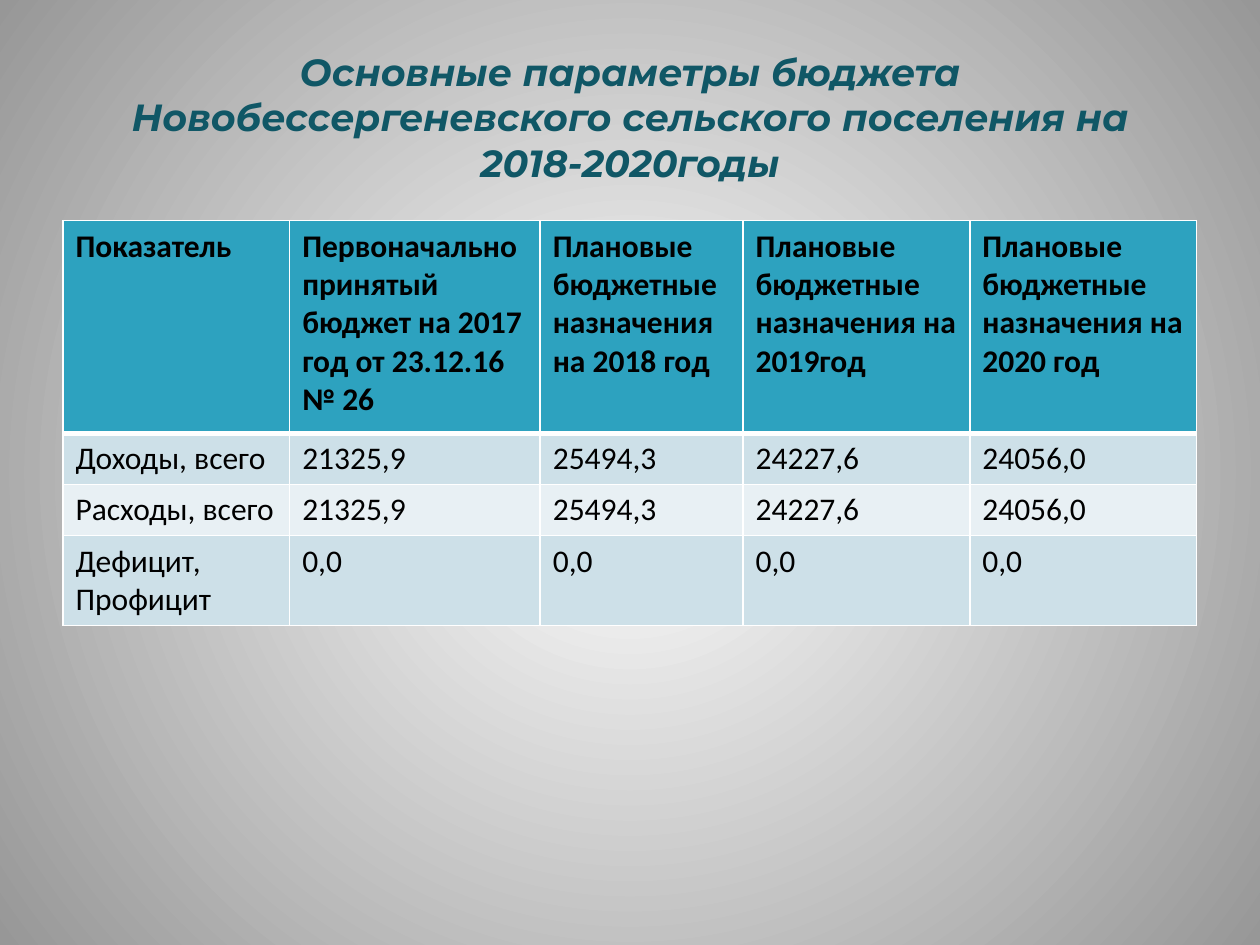
from pptx import Presentation
from pptx.dml.color import RGBColor
from pptx.enum.text import MSO_ANCHOR, PP_ALIGN
from pptx.oxml import parse_xml
from pptx.oxml.ns import nsdecls
from pptx.util import Cm, Pt

COLORS = {
    "title": "105766",
    "text": "000000",
    "header": "2DA2BF",
    "odd row": "CDE0E8",
    "even row": "E8F0F4",
    "border": "FFFFFF",
    "center": "FFFFFF",
    "edge": "979797",
}


def format_run(span, font, size, color, bold, italic=False):
    span.font.name = font
    span.font.size = Pt(size)
    span.font.color.rgb = RGBColor.from_string(COLORS[color])
    span.font.bold = bold
    span.font.italic = italic


def add_borders(cell, row):
    widths = {"L": 1, "R": 1, "T": 3 if row == 1 else 1, "B": 3 if row == 0 else 1}
    for position, (side, width) in enumerate(widths.items()):
        line = parse_xml(
            f'<a:ln{side} {nsdecls("a")} w="{Pt(width)}"><a:solidFill>'
            f'<a:srgbClr val="{COLORS["border"]}"/></a:solidFill></a:ln{side}>')
        cell._tc.get_or_add_tcPr().insert(position, line)


deck = Presentation()
deck.slide_width, deck.slide_height = Cm(25.4), Cm(19.05)
page = deck.slides.add_slide(deck.slide_layouts[5])

# Background: radial gradient from the middle of the slide
page.element.cSld.insert(0, parse_xml(
    f'<p:bg {nsdecls("p", "a")}><p:bgPr><a:gradFill rotWithShape="1"><a:gsLst>'
    f'<a:gs pos="0"><a:srgbClr val="{COLORS["center"]}"/></a:gs>'
    f'<a:gs pos="100000"><a:srgbClr val="{COLORS["edge"]}"/></a:gs></a:gsLst>'
    '<a:path path="circle"><a:fillToRect l="50000" t="50000" r="50000" b="50000"/></a:path>'
    '</a:gradFill><a:effectLst/></p:bgPr></p:bg>'))

# Title
title = page.shapes.title
title.left, title.top, title.width, title.height = Cm(1.27), Cm(0.76), Cm(22.86), Cm(3.18)
title.text_frame.text = ("Основные параметры бюджета Новобессергеневского "
                         "сельского поселения на 2018-2020годы")
title.text_frame.word_wrap = True
title.text_frame.vertical_anchor = MSO_ANCHOR.MIDDLE
para = title.text_frame.paragraphs[0]
para.alignment = PP_ALIGN.CENTER
format_run(para.runs[0], "Montserrat", 21.6, "title", True, True)

# Budget table
totals = ["21325,9", "25494,3", "24227,6", "24056,0"]
planned = "Плановые бюджетные назначения на"
rows = [
    ["Показатель", "Первоначально принятый бюджет на 2017 год от 23.12.16 № 26",
     f"{planned} 2018 год", f"{planned} 2019год", f"{planned} 2020 год"],
    ["Доходы, всего"] + totals,
    ["Расходы, всего"] + totals,
    ["Дефицит, Профицит"] + ["0,0"] * 4,
]
column_widths = [4.57, 5.05, 4.09, 4.57, 4.57]
row_heights = [4.29, 1.03, 1.03, 1.8]
table = page.shapes.add_table(
    len(rows), len(column_widths), Cm(1.27), Cm(4.45),
    Cm(sum(column_widths)), Cm(sum(row_heights))).table
for column, width in zip(table.columns, column_widths):
    column.width = Cm(width)

for row, (texts, height) in enumerate(zip(rows, row_heights)):
    table.rows[row].height = Cm(height)
    fill = "header" if row == 0 else "odd row" if row % 2 else "even row"
    for column, text in enumerate(texts):
        cell = table.cell(row, column)
        cell.text_frame.text = text
        format_run(cell.text_frame.paragraphs[0].runs[0], "Calibri", 18, "text", row == 0)
        cell.fill.solid()
        cell.fill.fore_color.rgb = RGBColor.from_string(COLORS[fill])
        add_borders(cell, row)

deck.save("out.pptx")
